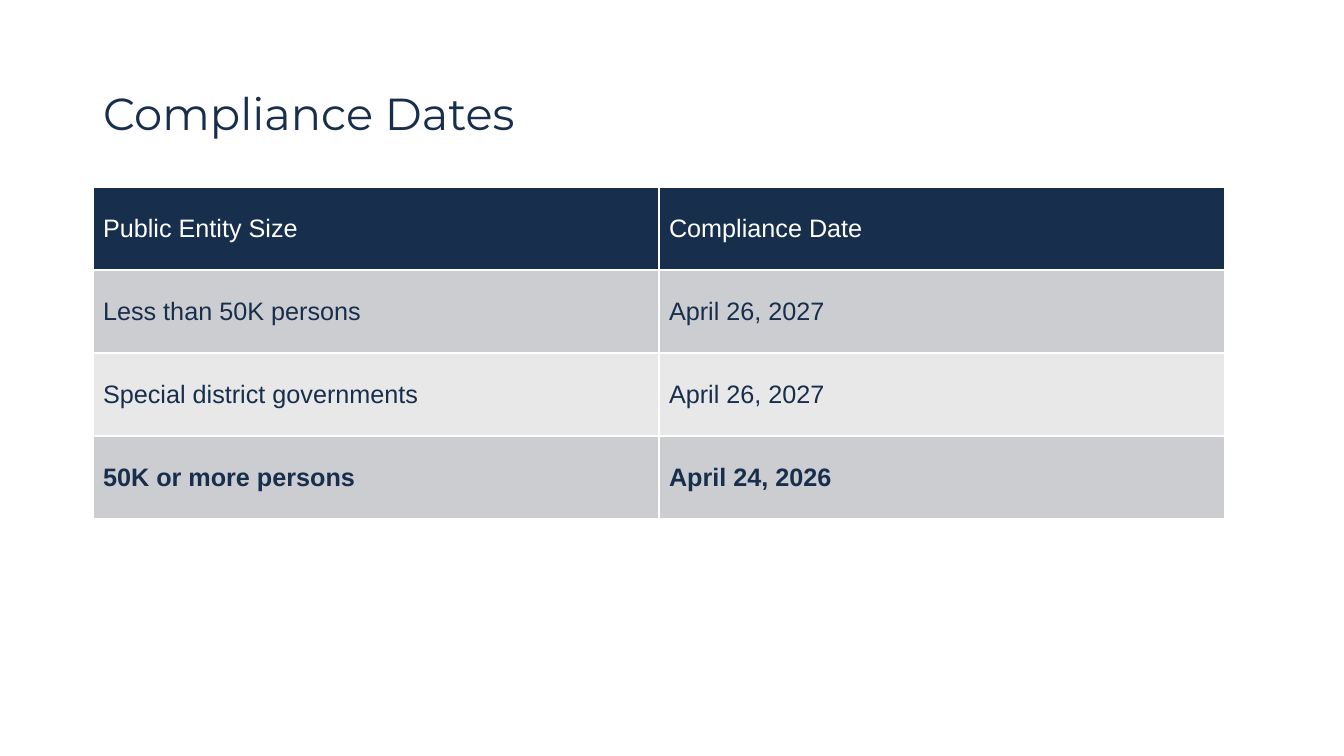
from pptx import Presentation
from pptx.dml.color import RGBColor
from pptx.enum.text import MSO_ANCHOR, PP_ALIGN
from pptx.util import Emu, Pt

NAVY = RGBColor(0x17, 0x2E, 0x4C)
WHITE = RGBColor(0xFF, 0xFF, 0xFF)
GREY = RGBColor(0xCC, 0xCD, 0xD0)
PALE_GREY = RGBColor(0xE8, 0xE8, 0xE9)

EMU_PER_PX = 914400 / 100.8
TITLE_ONLY = 5

COMPLIANCE_ROWS = [
    ("Public Entity Size", "Compliance Date"),
    ("Less than 50K persons", "April 26, 2027"),
    ("Special district governments", "April 26, 2027"),
    ("50K or more persons", "April 24, 2026"),
]
COLUMN_WIDTH = 566
ROW_HEIGHT = 83


def px(length):
    return Emu(round(length * EMU_PER_PX))


def style_paragraph(para, font_name, size, color, bold=False):
    para.alignment = PP_ALIGN.LEFT
    para.font.name = font_name
    para.font.size = Pt(size)
    para.font.color.rgb = color
    para.font.bold = bold


def add_title(page, text):
    title = page.shapes.title
    title.left, title.top = px(93), px(85)
    title.width, title.height = px(1159), px(61)
    title.text_frame.text = text
    title.text_frame.vertical_anchor = MSO_ANCHOR.MIDDLE
    para = title.text_frame.paragraphs[0]
    para.line_spacing = 0.9
    style_paragraph(para, "Montserrat", 32, NAVY)


def fill_cell(cell, text, fill, color, bold):
    cell.text = text
    cell.vertical_anchor = MSO_ANCHOR.MIDDLE
    cell.fill.solid()
    cell.fill.fore_color.rgb = fill
    style_paragraph(cell.text_frame.paragraphs[0], "Arial", 18, color, bold)


def add_date_table(page, rows):
    """Add a table with a navy header, grey bands and a bold last row."""
    row_count, column_count = len(rows), len(rows[0])
    table = page.shapes.add_table(
        row_count, column_count, px(93), px(187),
        px(COLUMN_WIDTH * column_count), px(ROW_HEIGHT * row_count)).table
    for row_index, texts in enumerate(rows):
        is_header = row_index == 0
        band = GREY if row_index % 2 else PALE_GREY
        fill, color = (NAVY, WHITE) if is_header else (band, NAVY)
        bold = row_index == row_count - 1
        for column_index, text in enumerate(texts):
            fill_cell(table.cell(row_index, column_index), text, fill, color, bold)


def main():
    deck = Presentation()
    deck.slide_width, deck.slide_height = px(1344), px(756)
    page = deck.slides.add_slide(deck.slide_layouts[TITLE_ONLY])
    add_title(page, "Compliance Dates")
    add_date_table(page, COMPLIANCE_ROWS)
    deck.save("out.pptx")


if __name__ == "__main__":
    main()
